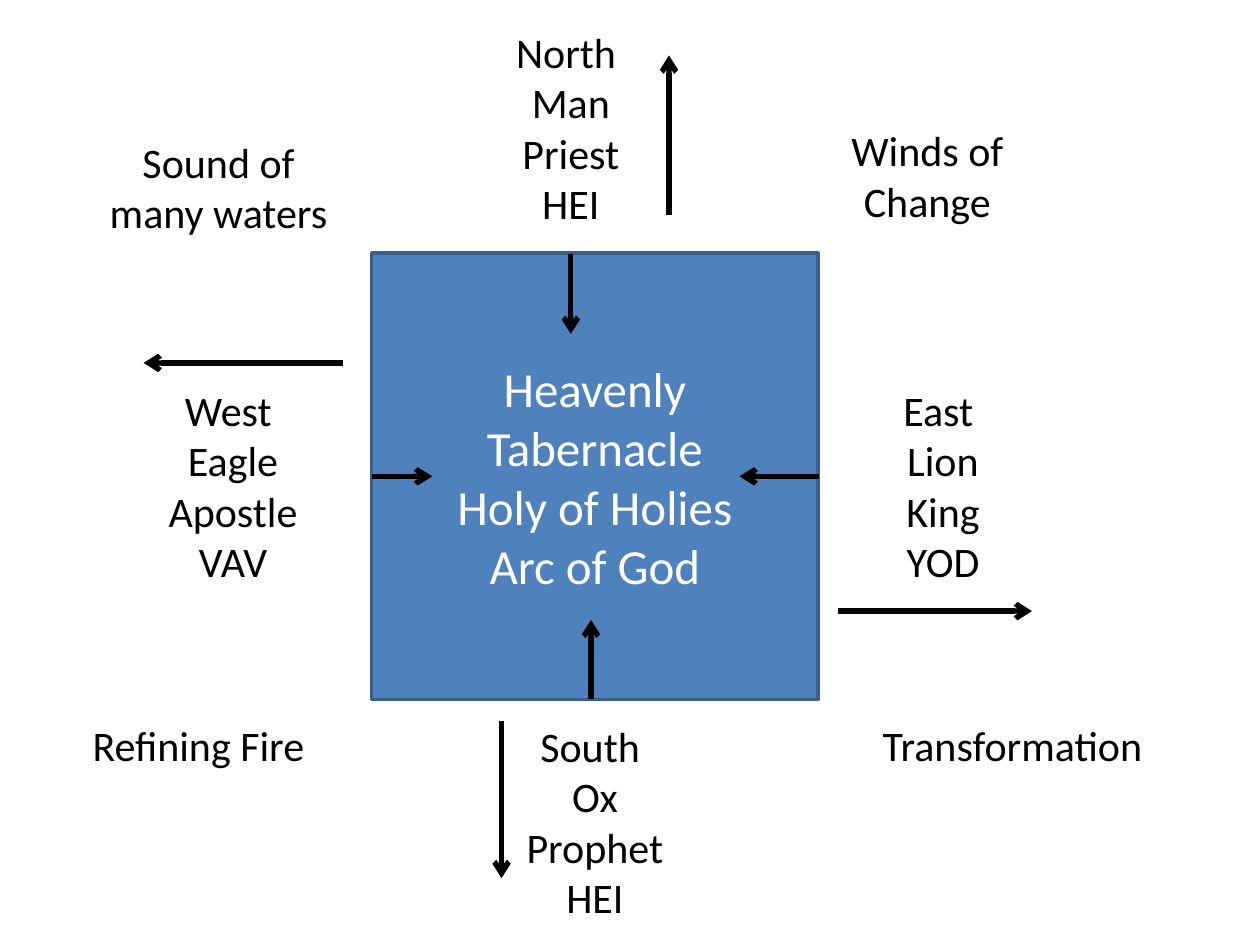
import pptx
import pptx.dml.color
import pptx.enum.shapes
import pptx.enum.text
import pptx.oxml
import pptx.oxml.ns
import pptx.util

Pt = pptx.util.Pt

DIRECTIONS = [
    (["North ", "Man", "Priest", "HEI"], (286.6, 15.1, 79.2, 113)),
    (["South ", "Ox", "Prophet", "HEI"], (297.4, 411.8, 85, 113)),
    (["East ", "Lion", "King", "YOD"], (507.6, 219.6, 62.6, 112.3)),
    (["West ", "Eagle", "Apostle", "VAV"], (93.6, 219.6, 79.2, 129.6)),
]
CORNERS = [
    (["Transformation"], (502.6, 411.1, 151.9, 28.8)),
    (["Refining Fire"], (42.5, 411.1, 141.8, 28.8)),
    (["Winds of Change"], (478.8, 71.3, 102.2, 61.2)),
    (["Sound of many waters"], (54, 77.8, 141.8, 61.9)),
]
OUTWARD = [
    (382.3, 123.1, 382.3, 31.7),
    (286.6, 411.8, 286.6, 501.8),
    (478.8, 349.2, 589.7, 349.2),
    (195.8, 207.4, 82.1, 207.4),
]
INWARD = [
    (326.2, 145.4, 326.2, 190.8),
    (212.4, 272.2, 247, 272.2),
    (468, 272.2, 422.6, 272.2),
    (337.7, 399.6, 337.7, 354.2),
]


def color(value):
    return pptx.dml.color.RGBColor.from_string(value)


def write(frame, lines, size=24, ink="000000", anchor="TOP"):
    frame.word_wrap = True
    frame.vertical_anchor = getattr(pptx.enum.text.MSO_ANCHOR, anchor)
    for index, line in enumerate(lines):
        paragraph = frame.add_paragraph() if index else frame.paragraphs[0]
        paragraph.text = line
        paragraph.alignment = pptx.enum.text.PP_ALIGN.CENTER
        for run in paragraph.runs:
            run.font.name = "Calibri"
            run.font.size = Pt(size)
            run.font.color.rgb = color(ink)


def add_label(slide, lines, bounds):
    frame = slide.shapes.add_textbox(*map(Pt, bounds)).text_frame
    frame.margin_left = frame.margin_right = 0
    frame.margin_top = frame.margin_bottom = 0
    write(frame, lines)


def add_tabernacle(slide):
    square = slide.shapes.add_shape(
        pptx.enum.shapes.MSO_SHAPE.RECTANGLE,
        Pt(212.4), Pt(144.7), Pt(255), Pt(255))
    square.shadow.inherit = False
    square.fill.solid()
    square.fill.fore_color.rgb = color("4F81BD")
    square.line.color.rgb = color("3A5F8C")
    square.line.width = Pt(2)
    write(square.text_frame,
          ["Heavenly\vTabernacle", "Holy of Holies", "Arc of God"],
          size=28, ink="FFFFFF", anchor="MIDDLE")


def add_arrow(slide, ends):
    arrow = slide.shapes.add_connector(
        pptx.enum.shapes.MSO_CONNECTOR.STRAIGHT, *map(Pt, ends))
    arrow.line.color.rgb = color("000000")
    arrow.line.width = Pt(3)
    tip = pptx.oxml.parse_xml(
        f'<a:tailEnd {pptx.oxml.ns.nsdecls("a")} type="arrow"/>')
    arrow.line._get_or_add_ln().append(tip)
    arrow._element.spPr.append(pptx.oxml.parse_xml(
        f'<a:effectLst {pptx.oxml.ns.nsdecls("a")}/>'))


def main():
    deck = pptx.Presentation()
    deck.slide_width, deck.slide_height = Pt(720), Pt(540)
    slide = deck.slides.add_slide(deck.slide_layouts[6])
    add_tabernacle(slide)
    for lines, bounds in DIRECTIONS + CORNERS:
        add_label(slide, lines, bounds)
    for ends in OUTWARD + INWARD:
        add_arrow(slide, ends)
    deck.save("out.pptx")


if __name__ == "__main__":
    main()
